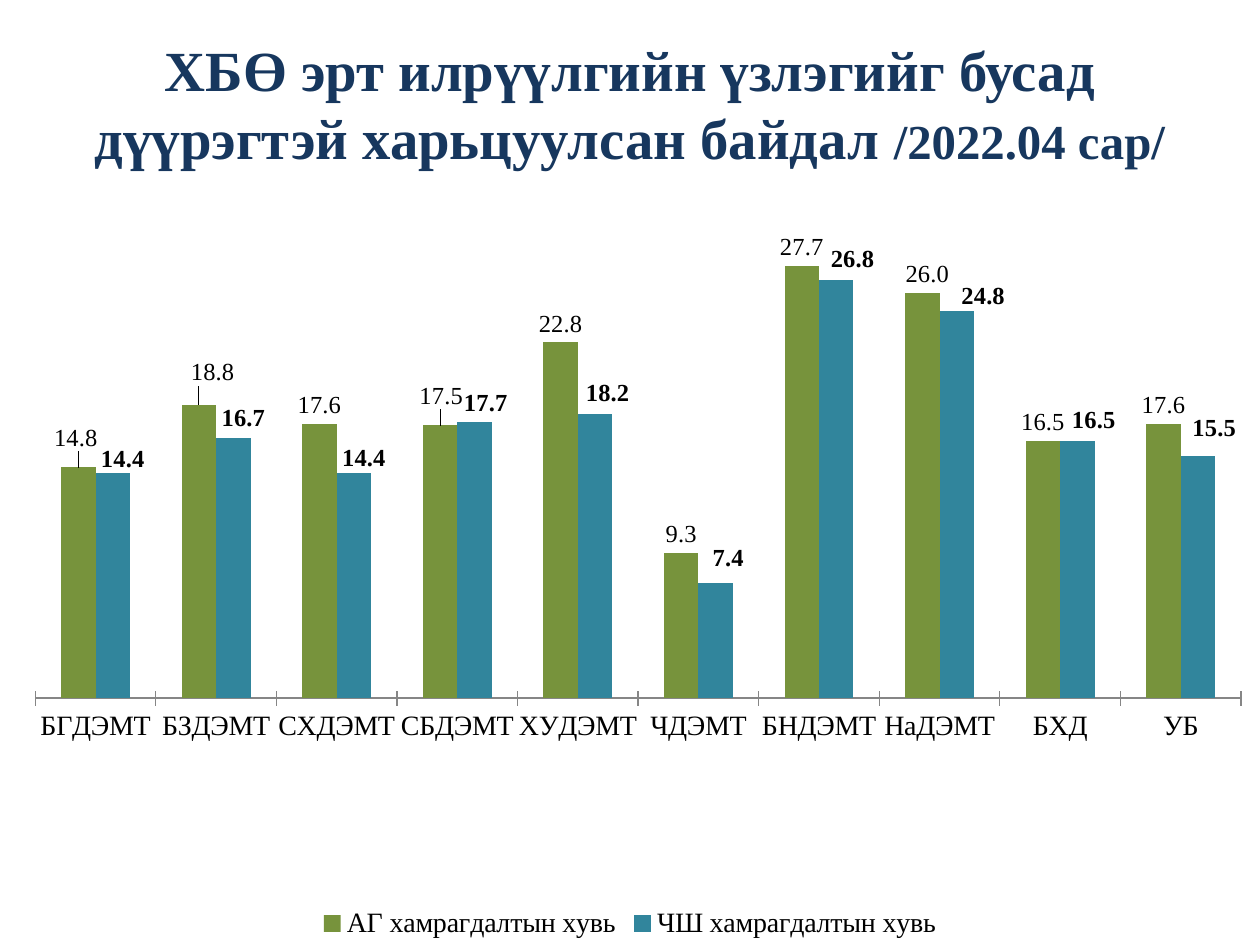
from pptx import Presentation
from pptx import util as u
from pptx.chart import data
from pptx.dml import color
from pptx.enum import chart as ch
from pptx.enum import text
from pptx.oxml import parse_xml
from pptx.oxml.ns import nsdecls

HUES = {"title": "17375E", "ink": "000000", "early": "77933C",
        "cancer": "31859C", "axis": "868686"}
FACE = "Times New Roman"


def style(font, size, hue="ink", bold=False):
    look = {"name": FACE, "size": u.Pt(size), "bold": bold}
    for key, val in look.items():
        setattr(font, key, val)
    font.color.rgb = color.RGBColor.from_string(HUES[hue])


def layout(inner="", **share):
    mode = "".join(f'<c:{k}Mode val="edge"/>' for k in "xy") if inner else ""
    vals = "".join(f'<c:{k} val="{v:.4f}"/>' for k, v in share.items())
    return parse_xml(f'<c:layout {nsdecls("c")}><c:manualLayout>{inner}{mode}'
                     f'{vals}</c:manualLayout></c:layout>')


deck = Presentation()
deck.slide_width, deck.slide_height = u.Inches(10), u.Inches(7.5)
W, H = deck.slide_width, deck.slide_height
slide = deck.slides.add_slide(deck.slide_layouts[6])

# Title
box = slide.shapes.add_textbox(int(W * .05), int(H * .04), int(W * .9), int(H * .137))
frame = box.text_frame
frame.word_wrap = True
frame.vertical_anchor = text.MSO_ANCHOR.MIDDLE
para = frame.paragraphs[0]
para.alignment = text.PP_ALIGN.CENTER
for words, size in (("ХБӨ эрт илрүүлгийн үзлэгийг бусад дүүрэгтэй харьцуулсан байдал ", 32.4),
                    ("/2022.04 сар/", 27.9)):
    run = para.add_run()
    run.text = words
    style(run.font, size, "title", True)

# Chart data; each nudge is a label's shift in thousandths of the chart
names = ["БГДЭМТ", "БЗДЭМТ", "СХДЭМТ", "СБДЭМТ", "ХУДЭМТ",
         "ЧДЭМТ", "БНДЭМТ", "НаДЭМТ", "БХД", "УБ"]
rows = [
    ("АГ хамрагдалтын хувь", "early", False,
     [14.8, 18.8, 17.6, 17.5, 22.8, 9.3, 27.7, 26, 16.5, 17.6],
     {0: (-2, -15), 1: (11, -19), 3: (1, -14), 7: (4, 0)}),
    ("ЧШ хамрагдалтын хувь", "cancer", True,
     [14.4, 16.7, 14.4, 17.7, 18.2, 7.4, 26.8, 24.8, 16.5, 15.5],
     dict(enumerate([(8, 6), (8, -1), (8, 4), (9, 0), (10, -4),
                     (10, -8), (13, -4), (21, 5), (13, -3), (13, -13)]))),
]
info = data.CategoryChartData(number_format="0.0")
info.categories = names
for name, hue, bold, vals, nudges in rows:
    info.add_series(name, vals)

top = int(H * .2227)
chart = slide.shapes.add_chart(ch.XL_CHART_TYPE.COLUMN_CLUSTERED,
                               0, top, W, H - top, info).chart
style(chart.font, 16)
chart.has_title = False
chart.has_legend = True
chart.legend.position = ch.XL_LEGEND_POSITION.BOTTOM
chart.legend.include_in_layout = False
style(chart.legend.font, 16)

# Axes
cat, val = chart.category_axis, chart.value_axis
cat.major_tick_mark = ch.XL_TICK_MARK.CROSS
cat.format.line.color.rgb = color.RGBColor.from_string(HUES["axis"])
style(cat.tick_labels.font, 16)
val.minimum_scale, val.maximum_scale = 0, 30
val.has_major_gridlines = False
val.visible = False

# Plot area
plot = chart.plots[0]
plot.gap_width, plot.overlap, plot.vary_by_categories = 150, 0, False
area = chart._chartSpace.chart.plotArea
for old in area.xpath("c:layout"):
    area.remove(old)
area.insert(0, layout('<c:layoutTarget val="inner"/>', x=.028, y=.027, w=.957, h=.637))

# Bars and labels
for bar, (name, hue, bold, vals, nudges) in zip(plot.series, rows):
    bar.format.fill.solid()
    bar.format.fill.fore_color.rgb = color.RGBColor.from_string(HUES[hue])
    tags = bar.data_labels
    tags.show_value = True
    tags.number_format, tags.number_format_is_linked = "0.0", False
    tags.position = ch.XL_LABEL_POSITION.OUTSIDE_END
    style(tags.font, 14, bold=bold)
    for spot, (dx, dy) in nudges.items():
        tag = bar.points[spot].data_label
        tag.position = ch.XL_LABEL_POSITION.OUTSIDE_END
        style(tag.font, 14, bold=bold)
        node = bar._element.xpath(f'c:dLbls/c:dLbl[c:idx/@val="{spot}"]')[0]
        node.insert(1, layout(x=dx / 1000, y=dy / 1000))
        node.insert(2, parse_xml(f'<c:numFmt {nsdecls("c")} formatCode="0.0" sourceLinked="0"/>'))

deck.save("out.pptx")
